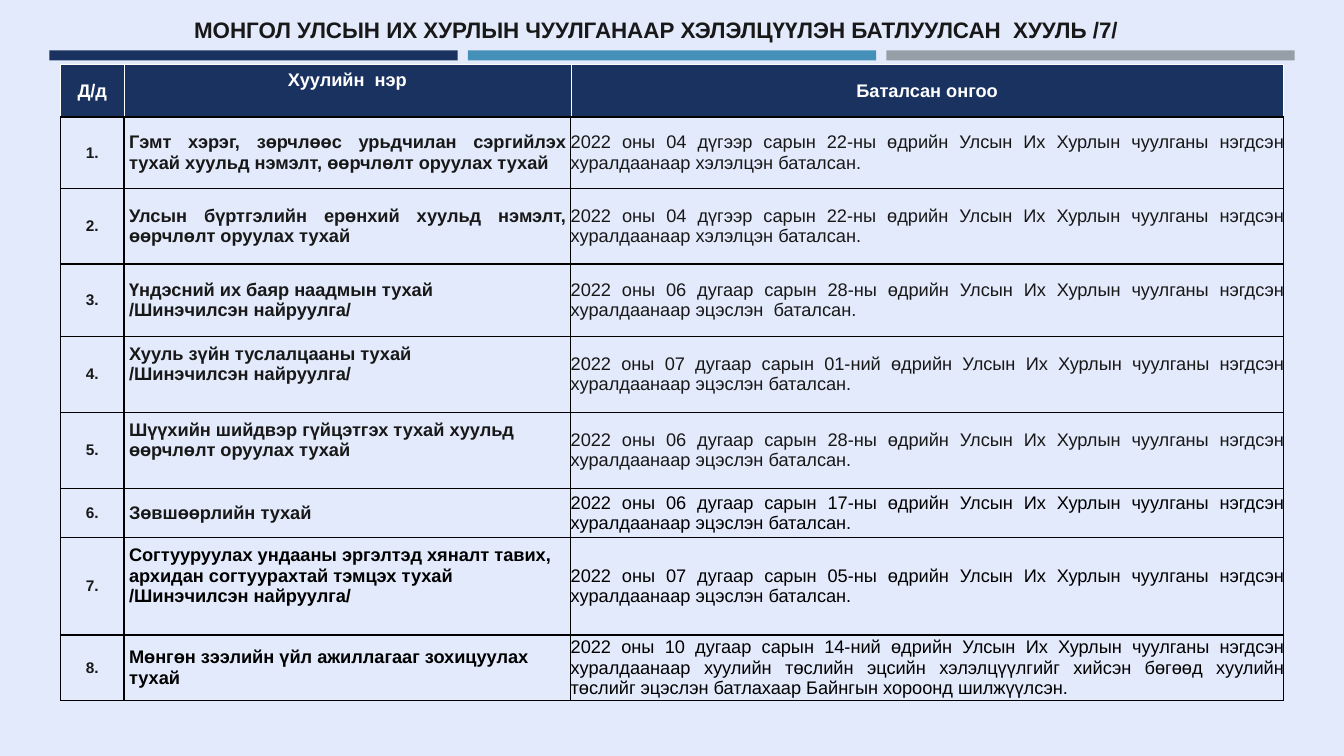
import pptx
import pptx.dml.color
import pptx.enum.shapes
import pptx.enum.text
import pptx.oxml.ns
import pptx.util
from lxml import etree

RGB = pptx.dml.color.RGBColor
ALIGN = pptx.enum.text.PP_ALIGN
ANCHOR = pptx.enum.text.MSO_ANCHOR

BACKGROUND = RGB(0xE3, 0xEA, 0xFB)
NAVY = RGB(0x1A, 0x32, 0x60)
BLUE = RGB(0x45, 0x90, 0xB8)
GREY = RGB(0x96, 0x9F, 0xA7)
INK = RGB(0x18, 0x18, 0x18)
BLACK = RGB(0, 0, 0)
WHITE = RGB(0xFF, 0xFF, 0xFF)

# The page is a grid of 1333 columns and 750 rows.
COLUMNS, ROWS = 1333, 750
UNIT = pptx.util.Inches(0.01)

TITLE = "МОНГОЛ УЛСЫН ИХ ХУРЛЫН ЧУУЛГАНААР ХЭЛЭЛЦҮҮЛЭН БАТЛУУЛСАН  ХУУЛЬ /7/"
HEADINGS = ["Д/д", "Хуулийн  нэр", "Баталсан онгоо"]
REVISED = "\n/Шинэчилсэн найруулга/"
DISCUSSED = "хэлэлцэн баталсан."
FINAL = "эцэслэн баталсан."
COLUMN_WIDTHS = [63, 443, 707]
HEADER_HEIGHT = 52
INSET, LIFTED_INSET = 5, 25

# Row height, law, law alignment, lifted, law colour, month, day, outcome, date colour
LAWS = [
    (71, "Гэмт хэрэг, зөрчлөөс урьдчилан сэргийлэх тухай хуульд нэмэлт, өөрчлөлт оруулах тухай",
     ALIGN.JUSTIFY, False, INK, "04 дүгээр", "22-ны", DISCUSSED, INK),
    (75, "Улсын бүртгэлийн ерөнхий хуульд нэмэлт, өөрчлөлт оруулах тухай",
     ALIGN.JUSTIFY, False, INK, "04 дүгээр", "22-ны", DISCUSSED, INK),
    (72, "Үндэсний их баяр наадмын тухай" + REVISED,
     ALIGN.LEFT, False, INK, "06 дугаар", "28-ны", "эцэслэн  баталсан.", INK),
    (75, "Хууль зүйн туслалцааны тухай" + REVISED,
     ALIGN.LEFT, True, INK, "07 дугаар", "01-ний", FINAL, INK),
    (76, "Шүүхийн шийдвэр гүйцэтгэх тухай хуульд өөрчлөлт оруулах тухай",
     ALIGN.LEFT, True, INK, "06 дугаар", "28-ны", FINAL, INK),
    (48, "Зөвшөөрлийн тухай",
     ALIGN.LEFT, False, INK, "06 дугаар", "17-ны", FINAL, BLACK),
    (97, "Согтууруулах ундааны эргэлтэд хяналт тавих, архидан согтуурахтай тэмцэх тухай" + REVISED,
     ALIGN.LEFT, True, BLACK, "07 дугаар", "05-ны", FINAL, BLACK),
    (65, "Мөнгөн зээлийн үйл ажиллагааг зохицуулах тухай",
     ALIGN.LEFT, False, BLACK, "10 дугаар", "14-ний",
     "хуулийн төслийн эцсийн хэлэлцүүлгийг хийсэн бөгөөд хуулийн төслийг "
     "эцэслэн батлахаар Байнгын хороонд шилжүүлсэн.", BLACK),
]


def place(column, row, width, height):
    return [UNIT * value for value in (column, row, width, height)]


def write(frame, text, size, color, bold=True, align=ALIGN.CENTER):
    frame.text = text
    for paragraph in frame.paragraphs:
        paragraph.alignment = align
        for span in paragraph.runs:
            span.font.name = "Arial"
            span.font.size = pptx.util.Pt(size)
            span.font.bold = bold
            span.font.color.rgb = color


def add_bars(page):
    for index, color in enumerate((NAVY, BLUE, GREY)):
        bar = page.shapes.add_shape(pptx.enum.shapes.MSO_SHAPE.RECTANGLE,
                                    *place(49 + 415 * index, 50, 405, 10))
        bar.shadow.inherit = False
        bar.fill.solid()
        bar.fill.fore_color.rgb = color
        bar.line.fill.background()


def add_title(page):
    box = page.shapes.add_textbox(*place(109, 11, 1084, 37))
    box.text_frame.word_wrap = True
    box.text_frame.auto_size = pptx.enum.text.MSO_AUTO_SIZE.SHAPE_TO_FIT_TEXT
    write(box.text_frame, TITLE, 16, INK)


def set_border(cell, side, color, points):
    name = pptx.oxml.ns.qn
    line = etree.SubElement(cell._tc.get_or_add_tcPr(), name("a:ln" + side),
                            w=str(pptx.util.Pt(points)))
    fill = etree.SubElement(line, name("a:solidFill"))
    etree.SubElement(fill, name("a:srgbClr"), val=str(color))


def style_cell(cell, header, inset, lifted=False):
    """Set borders, fill and insets; a lifted cell has its text above the middle."""
    for side in "LRTB":
        if header and side != "B":
            set_border(cell, side, WHITE, 0.25)
        else:
            set_border(cell, side, BLACK, 1)
    if header:
        cell.fill.solid()
        cell.fill.fore_color.rgb = NAVY
    else:
        cell.fill.background()
    cell.vertical_anchor = ANCHOR.MIDDLE
    cell.margin_left = cell.margin_right = cell.margin_top = UNIT * inset
    cell.margin_bottom = UNIT * (LIFTED_INSET if lifted else inset)


def fill_header(table):
    for index, heading in enumerate(HEADINGS):
        cell = table.cell(0, index)
        is_law = index == 1
        style_cell(cell, True, INSET if is_law else 0, is_law)
        write(cell.text_frame, heading, 13, WHITE)


def fill_law(table, row, record):
    _, law, align, lifted, law_color, month, day, outcome, date_color = record
    number_cell, law_cell, date_cell = table.rows[row].cells
    style_cell(number_cell, False, 0)
    style_cell(law_cell, False, INSET, lifted)
    style_cell(date_cell, False, 0)
    approval = (f"2022 оны {month} сарын {day} өдрийн Улсын Их Хурлын "
                f"чуулганы нэгдсэн хуралдаанаар {outcome}")
    write(number_cell.text_frame, f"{row}.", 11, INK)
    write(law_cell.text_frame, law, 13, law_color, align=align)
    write(date_cell.text_frame, approval, 13, date_color, False, ALIGN.JUSTIFY)


def add_law_table(page):
    heights = [HEADER_HEIGHT] + [record[0] for record in LAWS]
    table = page.shapes.add_table(
        len(heights), len(COLUMN_WIDTHS),
        *place(60, 64, sum(COLUMN_WIDTHS), sum(heights))).table
    table.first_row = table.horz_banding = False
    for column, width in zip(table.columns, COLUMN_WIDTHS):
        column.width = UNIT * width
    for row, height in zip(table.rows, heights):
        row.height = UNIT * height
    fill_header(table)
    for number, record in enumerate(LAWS, 1):
        fill_law(table, number, record)


def main():
    deck = pptx.Presentation()
    deck.slide_width, deck.slide_height = UNIT * COLUMNS, UNIT * ROWS
    page = deck.slides.add_slide(deck.slide_layouts[6])
    page.background.fill.solid()
    page.background.fill.fore_color.rgb = BACKGROUND
    add_bars(page)
    add_title(page)
    add_law_table(page)
    deck.save("out.pptx")


if __name__ == "__main__":
    main()
